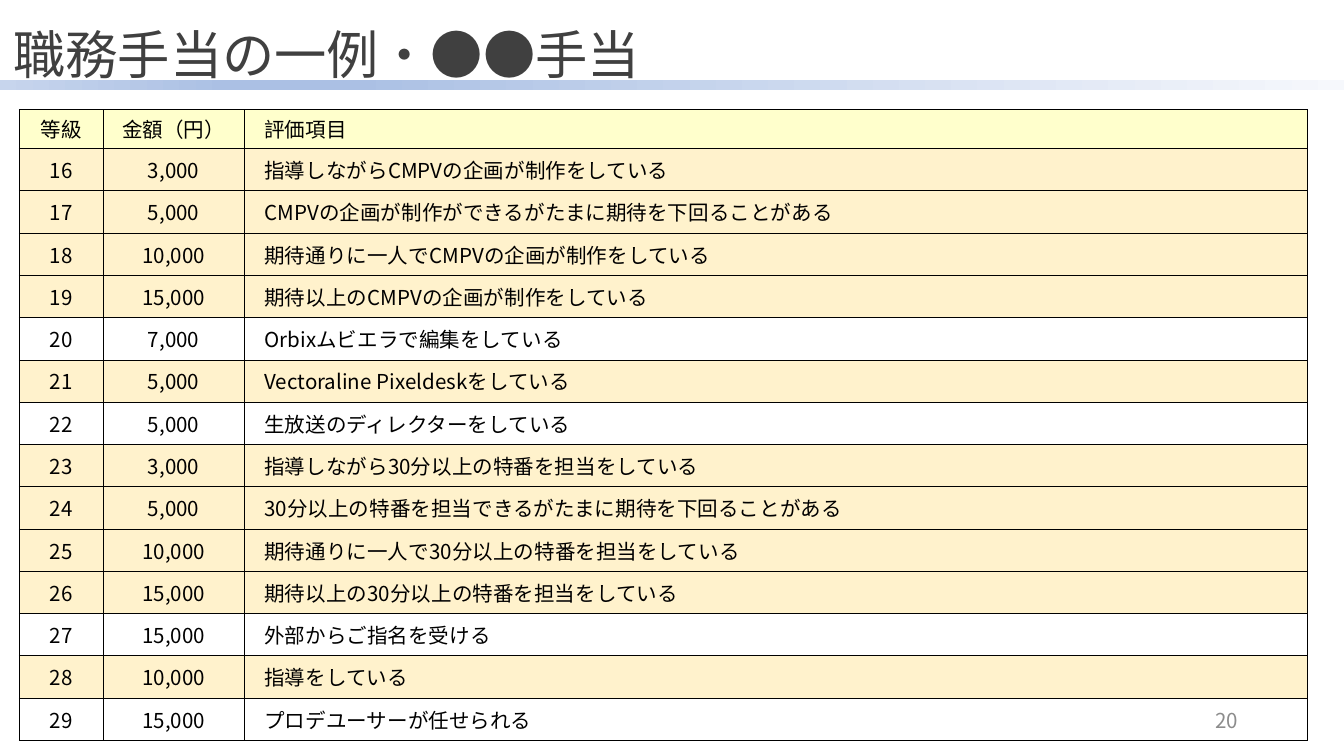
from lxml.etree import SubElement
from pptx import Presentation
from pptx.dml.color import RGBColor
from pptx.enum.shapes import MSO_SHAPE
from pptx.enum.text import MSO_ANCHOR, PP_ALIGN
from pptx.oxml.ns import qn
from pptx.util import Pt

TITLE = "職務手当の一例・●●手当"
PAGE_NUMBER = "20"
HEADINGS = ("等級", "金額（円）", "評価項目")
ALLOWANCES = [
    ("16", "3,000", "指導しながらCMPVの企画が制作をしている"),
    ("17", "5,000", "CMPVの企画が制作ができるがたまに期待を下回ることがある"),
    ("18", "10,000", "期待通りに一人でCMPVの企画が制作をしている"),
    ("19", "15,000", "期待以上のCMPVの企画が制作をしている"),
    ("20", "7,000", "Orbixムビエラで編集をしている"),
    ("21", "5,000", "Vectoraline Pixeldeskをしている"),
    ("22", "5,000", "生放送のディレクターをしている"),
    ("23", "3,000", "指導しながら30分以上の特番を担当をしている"),
    ("24", "5,000", "30分以上の特番を担当できるがたまに期待を下回ることがある"),
    ("25", "10,000", "期待通りに一人で30分以上の特番を担当をしている"),
    ("26", "15,000", "期待以上の30分以上の特番を担当をしている"),
    ("27", "15,000", "外部からご指名を受ける"),
    ("28", "10,000", "指導をしている"),
    ("29", "15,000", "プロデユーサーが任せられる"),
]
UNFILLED_GRADES = {"20", "22", "27", "29"}

FONT = "Noto Sans CJK JP"
COLORS = {
    "title": "404040",
    "page": "8C8C8C",
    "text": "000000",
    "border": "000000",
    "heading": "FFFFCC",
    "allowance": "FFF2CC",
}
BAND_STOPS = [(0, "F6F8FC"), (74, "ABC0E4"), (83, "ABC0E4"), (100, "C7D5ED")]
COLUMN_WIDTHS = (45.2, 75.2, 569.9)
HEADING_HEIGHT, ALLOWANCE_HEIGHT = 20.9, 22.66
ITEM_INDENT = 11


def write(frame, text, size, color, align):
    frame.text = text
    frame.vertical_anchor = MSO_ANCHOR.MIDDLE
    paragraph = frame.paragraphs[0]
    paragraph.alignment = align
    font = paragraph.runs[0].font
    font.size = Pt(size)
    font.bold = False
    font.name = FONT
    font.color.rgb = RGBColor.from_string(COLORS[color])
    SubElement(paragraph.runs[0]._r.rPr, qn("a:ea"), typeface=FONT)


def add_band(slide):
    band = slide.shapes.add_shape(MSO_SHAPE.RECTANGLE, 0, Pt(42.7), Pt(720), Pt(5.5))
    band.shadow.inherit = False
    band.line.fill.background()
    band.fill.gradient()
    band.fill.gradient_angle = 180
    stops = band._element.spPr.find(qn("a:gradFill")).find(qn("a:gsLst"))
    for stop in list(stops):
        stops.remove(stop)
    for position, color in BAND_STOPS:
        stop = SubElement(stops, qn("a:gs"), pos=str(position * 1000))
        SubElement(stop, qn("a:srgbClr"), val=color)


def add_borders(cell):
    properties = cell._tc.get_or_add_tcPr()
    for index, side in enumerate(("lnL", "lnR", "lnT", "lnB")):
        border = SubElement(properties, qn(f"a:{side}"), w=str(int(Pt(0.25))))
        fill = SubElement(border, qn("a:solidFill"))
        SubElement(fill, qn("a:srgbClr"), val=COLORS["border"])
        properties.insert(index, border)


def add_allowance_table(slide):
    rows = [HEADINGS, *ALLOWANCES]
    heights = [HEADING_HEIGHT] + [ALLOWANCE_HEIGHT] * len(ALLOWANCES)
    table = slide.shapes.add_table(
        len(rows), len(HEADINGS), Pt(10.3), Pt(58.6),
        Pt(sum(COLUMN_WIDTHS)), Pt(sum(heights)),
    ).table
    table.first_row = table.horz_banding = False
    for column, width in zip(table.columns, COLUMN_WIDTHS):
        column.width = Pt(width)
    for row_index, (values, height) in enumerate(zip(rows, heights)):
        table.rows[row_index].height = Pt(height)
        for column_index, value in enumerate(values):
            cell = table.cell(row_index, column_index)
            is_item = column_index == 2
            write(cell.text_frame, value, 11, "text",
                  PP_ALIGN.LEFT if is_item else PP_ALIGN.CENTER)
            cell.vertical_anchor = MSO_ANCHOR.MIDDLE
            cell.margin_left = Pt(ITEM_INDENT if is_item else 0)
            cell.margin_right = cell.margin_top = cell.margin_bottom = 0
            if values[0] in UNFILLED_GRADES:
                cell.fill.background()
            else:
                cell.fill.solid()
                cell.fill.fore_color.rgb = RGBColor.from_string(
                    COLORS["allowance" if row_index else "heading"])
            add_borders(cell)


def main():
    """Build the slide listing job allowances by grade."""
    presentation = Presentation()
    presentation.slide_width, presentation.slide_height = Pt(720), Pt(405)
    slide = presentation.slides.add_slide(presentation.slide_layouts[5])

    title = slide.shapes.title
    title.left, title.top, title.width, title.height = 0, Pt(-5.8), Pt(597.6), Pt(51.8)
    write(title.text_frame, TITLE, 28, "title", PP_ALIGN.LEFT)
    title.text_frame.paragraphs[0].line_spacing = 1.5

    add_band(slide)
    page = slide.shapes.add_textbox(Pt(508.3), Pt(375.1), Pt(162), Pt(21.6))
    page.text_frame.word_wrap = True
    write(page.text_frame, PAGE_NUMBER, 11, "page", PP_ALIGN.RIGHT)
    add_allowance_table(slide)

    presentation.save("out.pptx")


if __name__ == "__main__":
    main()
